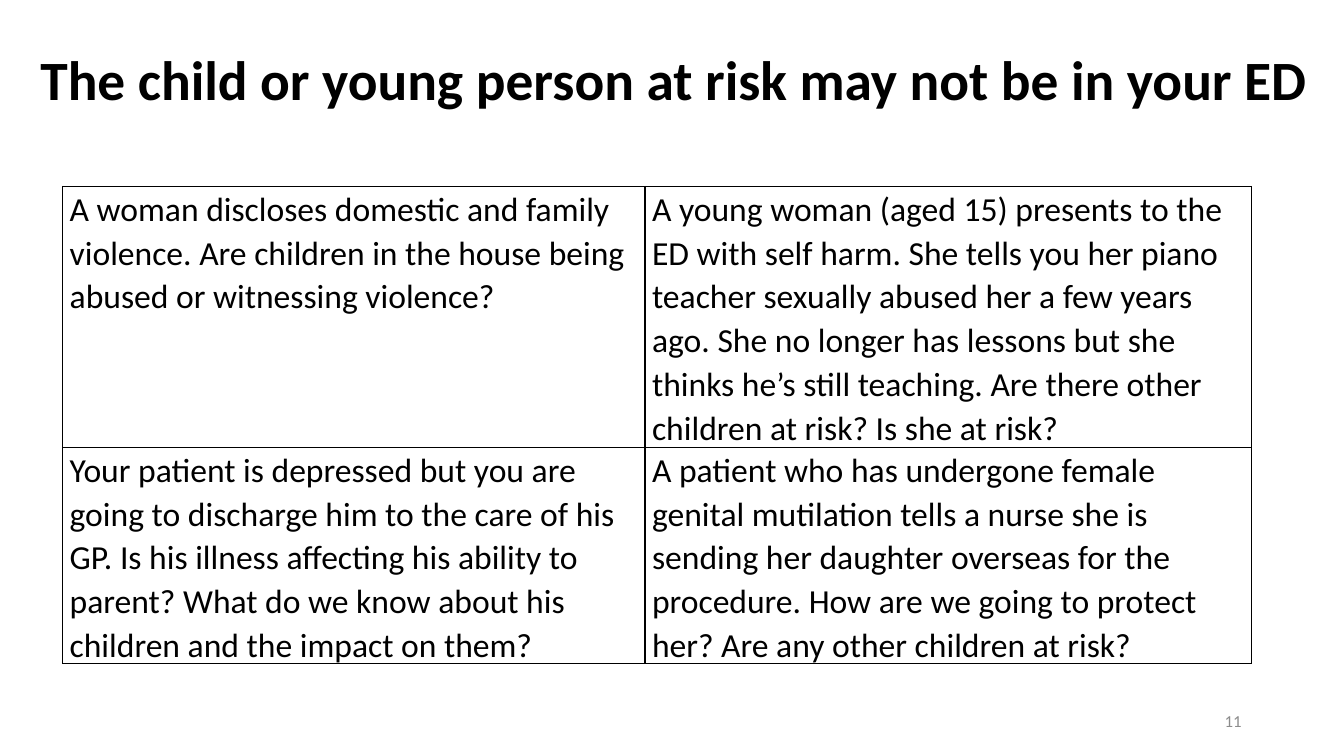
from lxml import etree
from pptx import Presentation
from pptx.dml.color import RGBColor
from pptx.enum import text
from pptx.oxml import ns
from pptx.util import Pt

COLOURS = {"ink": "000000", "number": "8C8C8C", "paper": "FFFFFF"}
FONT = "Calibri"
SCENARIOS = [
    [
        "A woman discloses domestic and family violence. Are children in the house "
        "being abused or witnessing violence?",
        "A young woman (aged 15) presents to the ED with self harm. She tells you her "
        "piano teacher sexually abused her a few years ago. She no longer has lessons "
        "but she thinks he’s still teaching. Are there other children at risk? "
        "Is she at risk?",
    ],
    [
        "Your patient is depressed but you are going to discharge him to the care of "
        "his GP. Is his illness affecting his ability to parent? What do we know about "
        "his children and the impact on them?",
        "A patient who has undergone female genital mutilation tells a nurse she is "
        "sending her daughter overseas for the procedure. How are we going to protect "
        "her? Are any other children at risk?",
    ],
]


def write(para, words, size, colour="ink", bold=False):
    """Add one formatted run to a paragraph."""
    span = para.add_run()
    span.text = words
    span.font.name = FONT
    span.font.size = Pt(size)
    span.font.bold = bold
    span.font.color.rgb = RGBColor.from_string(COLOURS[colour])


def outline_cell(cell, width):
    """Draw a solid line on all four sides of a table cell."""
    properties = cell._tc.get_or_add_tcPr()
    for side in ("a:lnL", "a:lnR", "a:lnT", "a:lnB"):
        line = etree.SubElement(properties, ns.qn(side), w=str(Pt(width)))
        fill = etree.SubElement(line, ns.qn("a:solidFill"))
        etree.SubElement(fill, ns.qn("a:srgbClr"), val=COLOURS["ink"])


def add_title(page, box, words):
    """Fill the title placeholder, with its line raised in the box."""
    title = page.shapes.title
    title.left, title.top, title.width, title.height = map(Pt, box)
    frame = title.text_frame
    frame.word_wrap = True
    frame.auto_size = text.MSO_AUTO_SIZE.NONE
    frame.vertical_anchor = text.MSO_ANCHOR.MIDDLE
    frame.margin_bottom = Pt(47)
    para = frame.paragraphs[0]
    para.alignment = text.PP_ALIGN.LEFT
    para.line_spacing = 0.9
    write(para, words, 39.6, bold=True)


def add_scenarios(page, box, scenarios, column_share, row_share):
    """Lay the scenarios out in an outlined two-by-two table."""
    left, top, width, height = box
    table = page.shapes.add_table(2, 2, *map(Pt, box)).table
    table.first_row = table.horz_banding = False
    for column, share in zip(table.columns, (column_share, 1 - column_share)):
        column.width = Pt(width * share)
    for row, share in zip(table.rows, (row_share, 1 - row_share)):
        row.height = Pt(height * share)
    for row, sentences in zip(table.rows, scenarios):
        for cell, words in zip(row.cells, sentences):
            cell.margin_left = cell.margin_right = Pt(5)
            cell.margin_top = cell.margin_bottom = Pt(0)
            outline_cell(cell, 1)
            cell.fill.solid()
            cell.fill.fore_color.rgb = RGBColor.from_string(COLOURS["paper"])
            para = cell.text_frame.paragraphs[0]
            para.line_spacing = 1.07
            write(para, words, 24)


def add_page_number(page, box, number):
    """Set the page number at the right of its box."""
    frame = page.shapes.add_textbox(*map(Pt, box)).text_frame
    frame.word_wrap = True
    frame.vertical_anchor = text.MSO_ANCHOR.MIDDLE
    para = frame.paragraphs[0]
    para.alignment = text.PP_ALIGN.RIGHT
    write(para, number, 12, "number")


def main():
    """Build the deck and save it."""
    deck = Presentation()
    deck.slide_width, deck.slide_height = Pt(960), Pt(540)
    page = deck.slides.add_slide(deck.slide_layouts[5])
    add_title(page, (21.6, 28.8, 927.4, 104.4),
              "The child or young person at risk may not be in your ED")
    add_page_number(page, (678, 500.5, 216, 28.8), "11")
    add_scenarios(page, (44.8, 133.2, 849, 339), SCENARIOS, 0.49, 0.55)
    deck.save("out.pptx")


if __name__ == "__main__":
    main()
